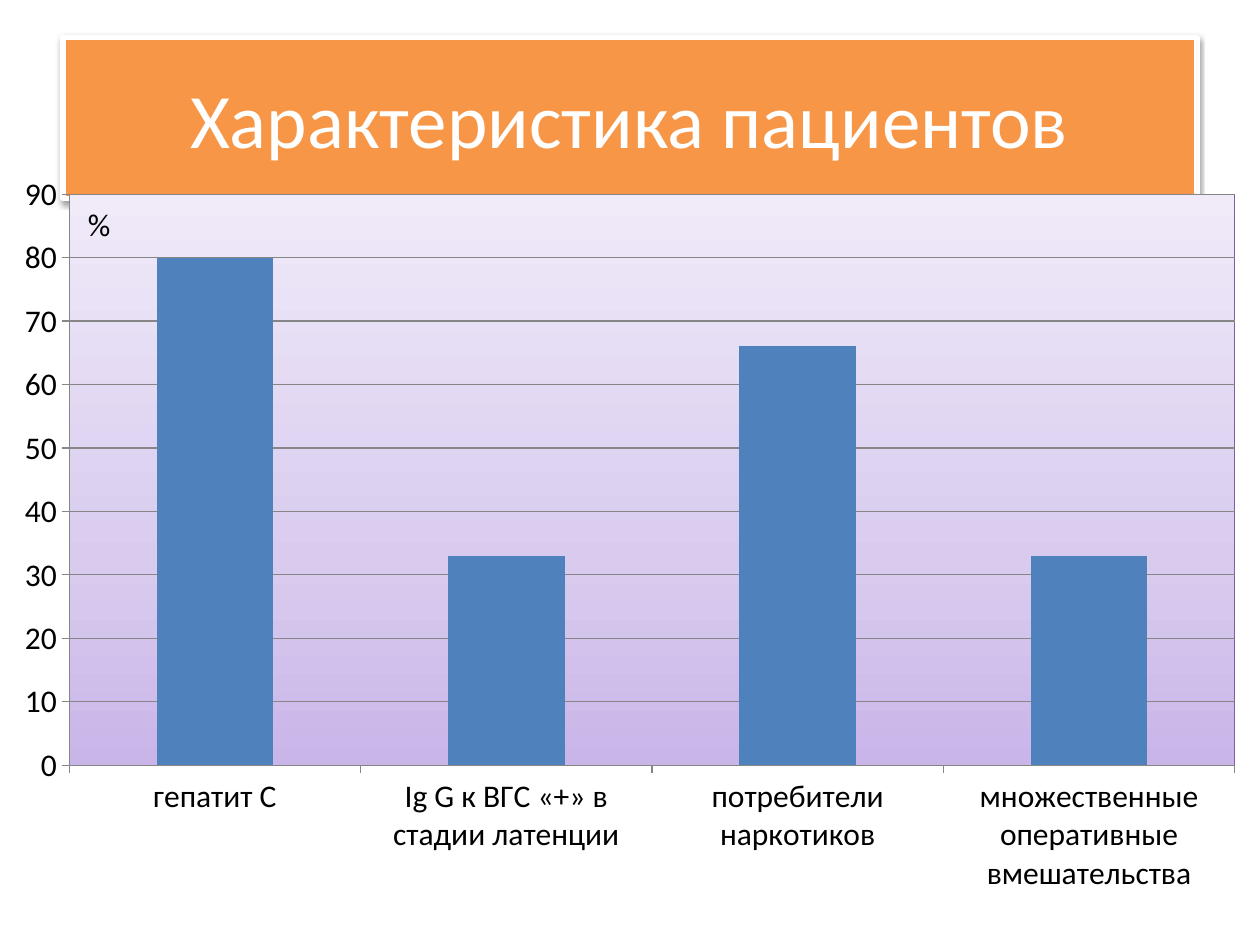
from typing import NamedTuple

from lxml.etree import _Element as Node
from pptx import Presentation
from pptx.chart.data import CategoryChartData as Data
from pptx.dml.color import RGBColor as RGB
from pptx.enum.chart import XL_CHART_TYPE as Kind, XL_TICK_MARK as Tick
from pptx.enum.text import MSO_ANCHOR as Anchor, MSO_AUTO_SIZE as Fit, PP_ALIGN as Align
from pptx.oxml import parse_xml
from pptx.oxml.ns import nsdecls
from pptx.util import Inches, Pt

WIDE, HIGH = Inches(10), Inches(7.5)
FONT = "Calibri"
HUES = {
    "title": "F79646", "white": "FFFFFF", "text": "000000", "bar": "4F81BD",
    "grid": "868686", "edge": "7D60A0",
    "low": "C9B5E8", "mid": "D8CBEE", "top": "F0EAF9",
}


class Box(NamedTuple):
    x: float
    y: float
    w: float
    h: float

    def scale(self) -> tuple[int, int, int, int]:
        return (int(self.x * WIDE), int(self.y * HIGH),
                int(self.w * WIDE), int(self.h * HIGH))


class Bar(NamedTuple):
    label: str
    value: int


HEAD = Box(0.05, 0.04, 0.9, 0.17)
GRAPH = Box(0, 0.17, 1, 0.79)
UNIT = Box(0.06, 0.21, 0.04, 0.05)
PLOT = Box(0.055, 0.045, 0.925, 0.765)
BARS = [
    Bar("гепатит С", 80),
    Bar("Ig G к ВГС «+» в стадии латенции", 33),
    Bar("потребители наркотиков", 66),
    Bar("множественные оперативные вмешательства", 33),
]


def hue(name: str) -> RGB:
    return RGB.from_string(HUES[name])


def style(font, size: float, name: str) -> None:
    font.name, font.size = FONT, Pt(size)
    font.color.rgb = hue(name)


def shade() -> Node:
    return parse_xml(
        f'<a:effectLst {nsdecls("a")}><a:outerShdw blurRad="{Pt(3.1)}" dist="{Pt(1.6)}"'
        f' dir="5400000" rotWithShape="0"><a:srgbClr val="{HUES["text"]}">'
        '<a:alpha val="38000"/></a:srgbClr></a:outerShdw></a:effectLst>')


def layout(box: Box) -> Node:
    sides = "".join(f'<c:{key} val="{val}"/>' for key, val in zip("xywh", box))
    return parse_xml(
        f'<c:layout {nsdecls("c")}><c:manualLayout><c:layoutTarget val="inner"/>'
        f'<c:xMode val="edge"/><c:yMode val="edge"/>{sides}</c:manualLayout></c:layout>')


def blend() -> Node:
    stops = "".join(
        f'<a:gs pos="{pos * 1000}"><a:srgbClr val="{HUES[name]}"/></a:gs>'
        for pos, name in ((0, "low"), (35, "mid"), (100, "top")))
    return parse_xml(
        f'<c:spPr {nsdecls("c", "a")}><a:gradFill rotWithShape="1"><a:gsLst>{stops}</a:gsLst>'
        f'<a:lin ang="{270 * 60000}" scaled="1"/></a:gradFill><a:ln w="{Pt(0.75)}">'
        f'<a:solidFill><a:srgbClr val="{HUES["edge"]}"/></a:solidFill></a:ln></c:spPr>')


def clear() -> Node:
    return parse_xml(f'<c:spPr {nsdecls("c", "a")}><a:noFill/>'
                     '<a:ln><a:noFill/></a:ln></c:spPr>')


def draw_title(slide, words: str) -> None:
    shape = slide.shapes.title
    shape.left, shape.top, shape.width, shape.height = HEAD.scale()
    shape.fill.solid()
    shape.fill.fore_color.rgb = hue("title")
    shape.line.color.rgb = hue("white")
    shape.line.width = Pt(3)
    shape._element.spPr.append(shade())
    frame = shape.text_frame
    frame.text = words
    frame.vertical_anchor = Anchor.MIDDLE
    para = frame.paragraphs[0]
    para.alignment = Align.CENTER
    style(para.font, 44, "white")


def draw_line(line) -> None:
    line.color.rgb = hue("grid")
    line.width = Pt(0.75)


def draw_chart(slide, bars: list[Bar]) -> None:
    data = Data()
    data.categories = [bar.label for bar in bars]
    data.add_series("Series 1", [bar.value for bar in bars])
    chart = slide.shapes.add_chart(Kind.COLUMN_CLUSTERED, *GRAPH.scale(), data).chart
    style(chart.font, 18, "text")
    chart.has_legend = chart.has_title = False
    plot = chart.plots[0]
    plot.gap_width, plot.vary_by_categories = 150, False
    fill = plot.series[0].format.fill
    fill.solid()
    fill.fore_color.rgb = hue("bar")
    for axis in (chart.category_axis, chart.value_axis):
        axis.major_tick_mark, axis.minor_tick_mark = Tick.OUTSIDE, Tick.NONE
        draw_line(axis.format.line)
    scale = chart.value_axis
    scale.minimum_scale, scale.maximum_scale, scale.major_unit = 0, 90, 10
    scale.has_major_gridlines = True
    draw_line(scale.major_gridlines.format.line)
    root = chart._chartSpace
    area = root.chart.plotArea
    for old in area.findall("{*}layout"):
        area.remove(old)
    area.insert(0, layout(PLOT))
    area.append(blend())
    root.chart.addnext(clear())


def draw_unit(slide, words: str) -> None:
    frame = slide.shapes.add_textbox(*UNIT.scale()).text_frame
    frame.text = words
    frame.word_wrap = False
    frame.auto_size = Fit.SHAPE_TO_FIT_TEXT
    style(frame.paragraphs[0].font, 18, "text")


def main() -> None:
    deck = Presentation()
    deck.slide_width, deck.slide_height = WIDE, HIGH
    slide = deck.slides.add_slide(deck.slide_layouts[5])
    draw_title(slide, "Характеристика пациентов")
    draw_chart(slide, BARS)
    draw_unit(slide, "%")
    deck.save("out.pptx")


if __name__ == "__main__":
    main()
